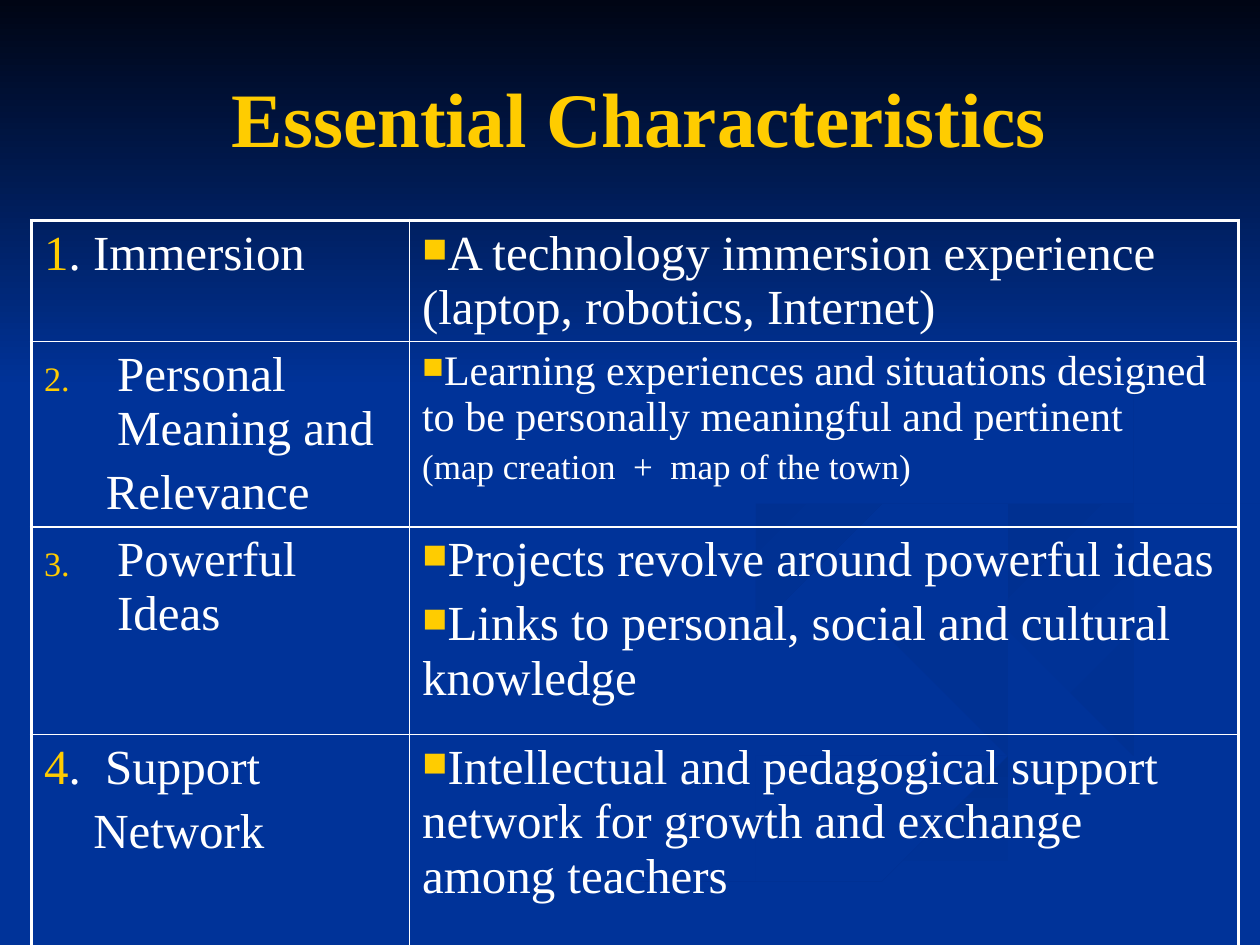
from lxml import etree
from pptx import Presentation
from pptx.dml.color import RGBColor
from pptx.enum import shapes, text
from pptx.oxml.ns import qn
from pptx.util import Inches, Pt

FONT = "Times New Roman"
NAVY, WHITE, GOLD = "003399", "FFFFFF", "FFCC00"
COLUMNS = [3, 6.58]
ROWS = [0.95, 1.47, 1.65, 2.27]

RIBBONS = [
    ([(7.8, 5.5), (5.75, 4.59), (5.8, 4.84), (7.8, 5.6), (6.5, 6.2), (3, 7.49),
      (3.6, 7.49), (5.6, 6.65), (8, 5.81)], NAVY, "003193", 0),
    ([(9.43, 5.7), (8.3, 5.2), (7.24, 4.64), (8.15, 5.3), (9.18, 5.8), (8.94, 6.05)],
     NAVY, "003193", 45),
    ([(5.03, 7.49), (5.71, 7.49), (7.5, 6.72), (9.98, 6.09), (9.98, 5.81), (7.6, 6.47)],
     "002F8C", NAVY, 90),
    ([(7.25, 4.64), (8.3, 5.2), (9.43, 5.7), (8.1, 6.25), (4.77, 7.49), (5.03, 7.49),
      (7.6, 6.47), (9.99, 5.81), (9.99, 5.38), (7.81, 4.63), (9.99, 4.02), (9.99, 3.87)],
     NAVY, NAVY, 0),
    ([(7.81, 4.6), (8.26, 4.96), (8.05, 4.7), (9.98, 4.2), (9.98, 4.02), (8.35, 4.3)],
     "003091", NAVY, 45),
    ([(6.8, 4.3), (8.55, 3.9), (8.94, 3.4), (7.62, 2.33), (8.89, 3.35), (7.9, 3.92),
      (5.77, 4.6), (6.22, 5)], "002F8E", NAVY, 45),
]


def color(value):
    """Turn a hex string into a colour."""
    return RGBColor.from_string(value)


def paint(sp, start, end, angle):
    """Fill a shape with a gradient turning clockwise by angle, without outline."""
    sp.shadow.inherit = False
    sp.line.fill.background()
    if start == end:
        sp.fill.solid()
        sp.fill.fore_color.rgb = color(start)
        return
    sp.fill.gradient()
    sp.fill.gradient_angle = -angle % 360
    for stop, value in zip(sp.fill.gradient_stops, (start, end)):
        stop.color.rgb = color(value)


def blend(a, b, c, d, t):
    """Interpolate between b and c on a Catmull-Rom curve."""
    return b + t / 2 * (c - a + t * (2 * a - 5 * b + 4 * c - d + t * (3 * (b - c) + d - a)))


def smooth_outline(points, steps=8):
    """Round a closed outline without leaving the bounds of its points."""
    count = len(points)
    bounds = [(min(axis), max(axis)) for axis in zip(*points)]
    outline = []
    for i in range(count):
        axes = list(zip(*(points[(i + k) % count] for k in (-1, 0, 1, 2))))
        for step in range(steps):
            outline.append(tuple(min(max(blend(*axis, step / steps), low), high)
                                 for axis, (low, high) in zip(axes, bounds)))
    return outline


def add_ribbon(s, points, start, end, angle):
    """Draw one background ribbon."""
    outline = smooth_outline(points)
    builder = s.shapes.build_freeform(*outline[0], scale=Inches(1))
    builder.add_line_segments(outline[1:], close=True)
    paint(builder.convert_to_shape(), start, end, angle)


def add_backdrop(s):
    """Draw the blue background, its ribbons and the dark band on top."""
    s.background.fill.solid()
    s.background.fill.fore_color.rgb = color(NAVY)
    for ribbon in RIBBONS:
        add_ribbon(s, *ribbon)
    band = s.shapes.add_shape(shapes.MSO_SHAPE.RECTANGLE, 0, 0, Inches(10), Inches(3.08))
    paint(band, "000514", NAVY, 90)


def style_run(r, size, value, bold=False):
    """Set the font of a run."""
    r.font.name, r.font.size, r.font.bold = FONT, Pt(size), bold
    r.font.color.rgb = color(value)


def set_title(s, wording):
    """Place and format the title in front of the backdrop."""
    sp = s.shapes.title
    s.shapes._spTree.append(sp._element)
    sp.left, sp.top, sp.width, sp.height = map(Inches, (0.5, 0.3, 9, 1.25))
    tf = sp.text_frame
    tf.text = wording
    tf.vertical_anchor = text.MSO_ANCHOR.MIDDLE
    p = tf.paragraphs[0]
    p.alignment = text.PP_ALIGN.CENTER
    style_run(p.runs[0], 44, GOLD, True)


def item(wording, size=28, lead="", square=False, number=None, indent=0):
    """Describe one paragraph of a cell."""
    return dict(wording=wording, size=size, lead=lead, square=square, number=number, indent=indent)


def square(wording, size=28):
    """Describe a paragraph with a square bullet."""
    return item(wording, size, square=True)


def add_bullet(pPr, tag, **attributes):
    """Give a paragraph a gold bullet at 70 percent."""
    clr = etree.SubElement(pPr, qn("a:buClr"))
    etree.SubElement(clr, qn("a:srgbClr"), val=GOLD)
    etree.SubElement(pPr, qn("a:buSzPct"), val="70000")
    etree.SubElement(pPr, qn(tag), **attributes)


def write_item(p, wording, size, lead, square, number, indent):
    """Write one described paragraph."""
    for part, value in ((lead, GOLD), (wording, WHITE)):
        if part:
            r = p.add_run()
            r.text = part
            style_run(r, size, value)
    p.space_before = Pt(size * 0.2)
    pPr = p._p.get_or_add_pPr()
    pPr.set("marL", str(Inches(0.58 if number else indent)))
    pPr.set("indent", str(Inches(-0.58 if number else 0)))
    if square:
        add_bullet(pPr, "a:buChar", char="■")
    elif number:
        add_bullet(pPr, "a:buAutoNum", type="arabicPeriod", startAt=str(number))


def set_borders(cell, outer):
    """Draw white borders, thick on the outer sides."""
    tcPr = cell._tc.get_or_add_tcPr()
    for side in "LRTB":
        width = Pt(2.25 if side in outer else 1)
        ln = etree.SubElement(tcPr, qn("a:ln" + side), w=str(width))
        fill = etree.SubElement(ln, qn("a:solidFill"))
        etree.SubElement(fill, qn("a:srgbClr"), val=WHITE)
    cell.fill.background()


def add_characteristics(s, content):
    """Add the table of characteristics."""
    box = map(Inches, (0.25, 1.75, sum(COLUMNS), sum(ROWS)))
    table = s.shapes.add_table(len(ROWS), len(COLUMNS), *box).table
    table.first_row = table.horz_banding = False
    for column, width in zip(table.columns, COLUMNS):
        column.width = Inches(width)
    for i, (row, height) in enumerate(zip(table.rows, ROWS)):
        row.height = Inches(height)
        for j, cell in enumerate(row.cells):
            outer = "LR"[j] + ("T" if i == 0 else "") + ("B" if i == len(ROWS) - 1 else "")
            set_borders(cell, outer)
            tf = cell.text_frame
            for k, entry in enumerate(content[i][j]):
                write_item(tf.add_paragraph() if k else tf.paragraphs[0], **entry)


def main():
    """Build the slide and save it."""
    prs = Presentation()
    prs.slide_width, prs.slide_height = Inches(10), Inches(7.5)
    s = prs.slides.add_slide(prs.slide_layouts[5])
    add_backdrop(s)
    set_title(s, " Essential Characteristics")
    add_characteristics(s, [
        ([item(". Immersion", lead="1")],
         [square("A technology immersion experience (laptop, robotics, Internet)")]),
        ([item("Personal Meaning and", number=2), item("Relevance", indent=0.49)],
         [square("Learning experiences and situations designed to be personally "
                 "meaningful and pertinent", 24),
          item("(map creation  +  map of the town)", 20)]),
        ([item("Powerful Ideas", number=3)],
         [square("Projects revolve around powerful ideas"),
          square("Links to personal, social and cultural knowledge")]),
        ([item(".  Support", lead="4"), item("Network", indent=0.39)],
         [square("Intellectual and pedagogical support network for growth and "
                 "exchange among teachers")]),
    ])
    prs.save("out.pptx")


if __name__ == "__main__":
    main()
